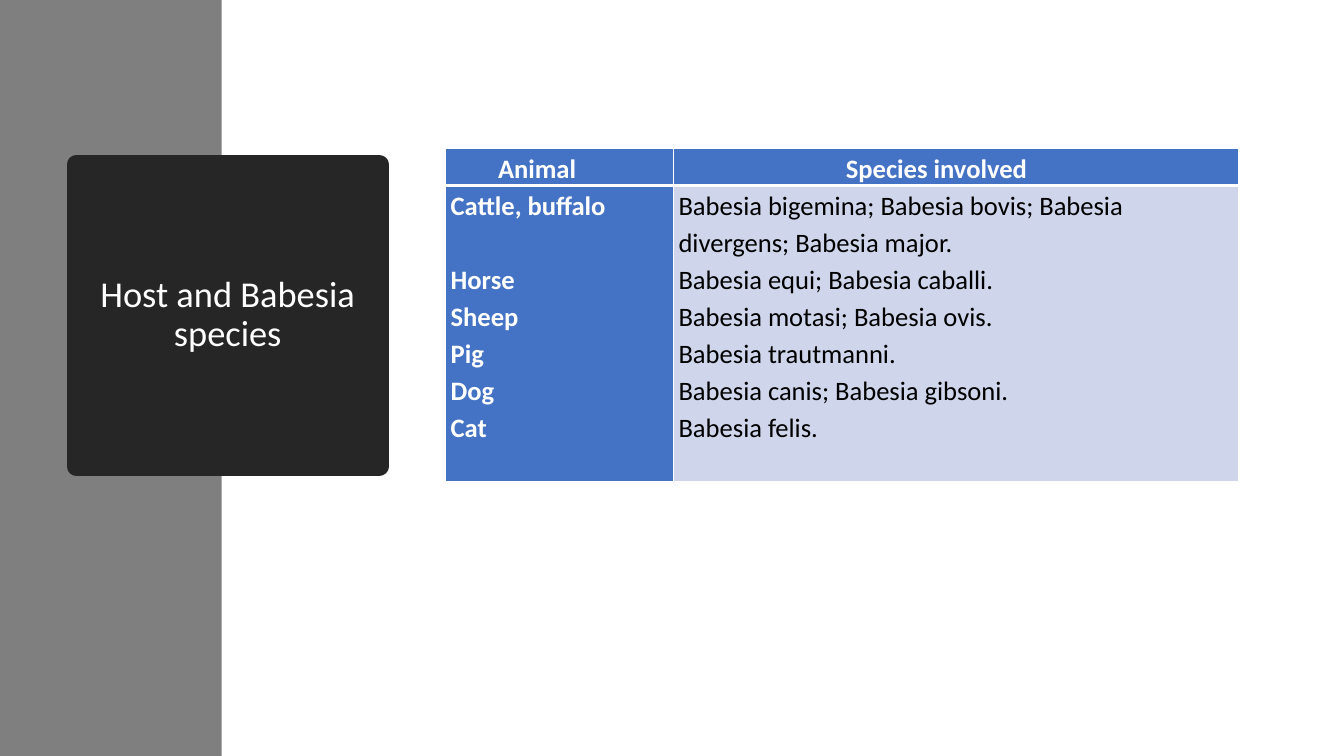
from lxml import etree
from pptx import Presentation
from pptx import util as u
from pptx.dml.color import RGBColor
from pptx.enum import shapes, text
from pptx.oxml.ns import qn

WIDTH, HEIGHT = u.Inches(13.33), u.Inches(7.5)
COLORS = {
    "band": "7F7F7F",
    "card": "262626",
    "header": "4472C4",
    "body": "CFD5EA",
    "light": "FFFFFF",
    "dark": "000000",
}
LINE_PITCH = 26.5  # points from one table line to the next
HEADER_FORMAT = {"size": u.Pt(19), "bold": True, "name": "Calibri"}
BODY_FORMAT = {**HEADER_FORMAT, "bold": False}
TITLE_FORMAT = {"size": u.Pt(26), "name": "Calibri"}

COLUMNS = [2.26, 5.6]
ROWS = [0.37, 2.94]
HEADINGS = [("Animal", 0.52), ("Species involved", 1.71)]  # label, left margin
# Host, species, number of lines the species take up
HOSTS = [
    ("Cattle, buffalo", "Babesia bigemina; Babesia bovis; Babesia divergens; Babesia major.", 2),
    ("Horse", "Babesia equi; Babesia caballi.", 1),
    ("Sheep", "Babesia motasi; Babesia ovis.", 1),
    ("Pig", "Babesia trautmanni.", 1),
    ("Dog", "Babesia canis; Babesia gibsoni.", 1),
    ("Cat", "Babesia felis.", 1),
]


def rgb(name):
    return RGBColor.from_string(COLORS[name])


def set_font(paragraph, formats, color):
    for name, value in formats.items():
        setattr(paragraph.font, name, value)
    paragraph.font.color.rgb = rgb(color)


def add_block(slide, left, top, width, height, color):
    shape = slide.shapes.add_shape(
        shapes.MSO_SHAPE.RECTANGLE, left, top, width, height)
    shape.shadow.inherit = False
    shape.fill.solid()
    shape.fill.fore_color.rgb = rgb(color)
    shape.line.fill.background()
    return shape


def add_title_card(slide, title):
    card = add_block(slide, u.Inches(0.76), u.Inches(1.63),
                     u.Inches(3), u.Inches(3), "card")
    # A thick outline with round joins softens the corners
    card.line.color.rgb = rgb("card")
    card.line.width = u.Pt(13.75)
    etree.SubElement(card.line._get_or_add_ln(), qn("a:round"))
    card.text_frame.word_wrap = True
    card.text_frame.vertical_anchor = text.MSO_ANCHOR.MIDDLE
    paragraph = card.text_frame.paragraphs[0]
    paragraph.text = title
    paragraph.alignment = text.PP_ALIGN.CENTER
    paragraph.line_spacing = 0.9
    set_font(paragraph, TITLE_FORMAT, "light")


def set_borders(cell, widths):
    properties = cell._tc.get_or_add_tcPr()
    for position, (side, width) in enumerate(widths.items()):
        line = etree.Element(qn(f"a:ln{side}"), w=str(u.Pt(width)))
        fill = etree.SubElement(line, qn("a:solidFill"))
        etree.SubElement(fill, qn("a:srgbClr"), val=COLORS["light"])
        properties.insert(position, line)


def fill_cell(cell, lines, formats, font_color, fill, left=0.05, borders=None):
    """Write (text, lines skipped before it) pairs into a cell."""
    margins = {"margin_left": left, "margin_right": 0.05,
               "margin_top": 0, "margin_bottom": 0}
    for name, value in margins.items():
        setattr(cell, name, u.Inches(value))
    cell.fill.solid()
    cell.fill.fore_color.rgb = rgb(fill)
    set_borders(cell, {"L": 1, "R": 1, "T": 1, "B": 1, **(borders or {})})
    frame = cell.text_frame
    for index, (line, skipped) in enumerate(lines):
        paragraph = frame.add_paragraph() if index else frame.paragraphs[0]
        paragraph.text = line
        paragraph.alignment = text.PP_ALIGN.LEFT
        paragraph.line_spacing = 1.15
        if skipped:
            paragraph.space_before = u.Pt(skipped * LINE_PITCH)
        set_font(paragraph, formats, font_color)


def add_host_table(slide):
    table = slide.shapes.add_table(
        len(ROWS), len(COLUMNS), u.Inches(4.42), u.Inches(1.47),
        u.Inches(sum(COLUMNS)), u.Inches(sum(ROWS))).table
    table.horz_banding = False
    for column, width in zip(table.columns, COLUMNS):
        column.width = u.Inches(width)
    for row, height in zip(table.rows, ROWS):
        row.height = u.Inches(height)

    # Heading row
    for column, (heading, left) in enumerate(HEADINGS):
        fill_cell(table.cell(0, column), [(heading, 0)], HEADER_FORMAT,
                  "light", "header", left, {"B": 3})

    # Hosts keep level with their species
    skips = [0] + [count - 1 for _, _, count in HOSTS[:-1]]
    animals = [(host, skip) for (host, _, _), skip in zip(HOSTS, skips)]
    species = [(names, 0) for _, names, _ in HOSTS]
    fill_cell(table.cell(1, 0), animals, HEADER_FORMAT, "light", "header",
              borders={"T": 3})
    fill_cell(table.cell(1, 1), species, BODY_FORMAT, "dark", "body",
              borders={"T": 3})


def main():
    presentation = Presentation()
    presentation.slide_width, presentation.slide_height = WIDTH, HEIGHT
    slide = presentation.slides.add_slide(presentation.slide_layouts[6])
    add_block(slide, 0, 0, u.Inches(2.2), HEIGHT, "band")
    add_title_card(slide, "Host and Babesia species")
    add_host_table(slide)
    presentation.save("out.pptx")


if __name__ == "__main__":
    main()
